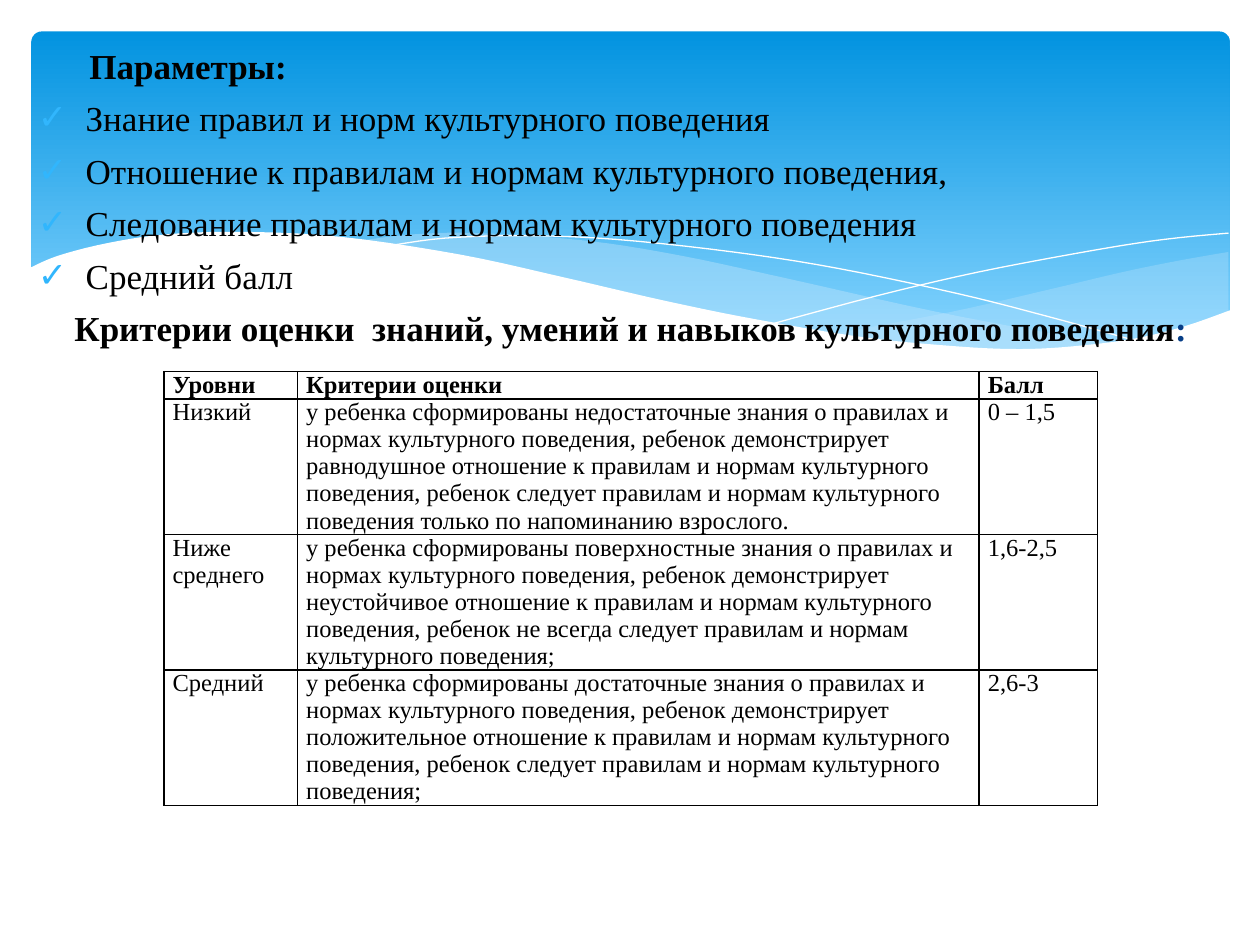
from dataclasses import dataclass

from pptx import Presentation
from pptx.dml.color import RGBColor as RGB
from pptx.enum.shapes import MSO_SHAPE as Shape
from pptx.enum.text import MSO_ANCHOR as Anchor, MSO_AUTO_SIZE as Fit, PP_ALIGN as Align
from pptx.oxml.ns import qn
from pptx.util import Inches, Pt
from lxml.etree import SubElement as Sub


@dataclass(frozen=True)
class Theme:
    """Colours and type sizes."""
    font: str = "Times New Roman"
    ink: str = "000000"
    navy: str = "073E87"
    tick: str = "31B6FD"
    deep: str = "0293E0"
    light: str = "83D3FE"
    pale: str = "C6E7FC"
    white: str = "FFFFFF"
    list_size: int = 20
    cell_size: int = 14
    gap: int = 6


THEME = Theme()
POINTS = [
    "Знание правил и норм культурного поведения",
    "Отношение к правилам и нормам культурного поведения,",
    "Следование правилам и нормам культурного поведения",
    "Средний балл",
]
ROWS = [
    ("Уровни", "Критерии оценки", "Балл"),
    ("Низкий",
     "у ребенка сформированы недостаточные знания о правилах и нормах культурного "
     "поведения, ребенок демонстрирует равнодушное отношение к правилам и нормам "
     "культурного поведения, ребенок следует правилам и нормам культурного поведения "
     "только по напоминанию взрослого.",
     "0 – 1,5"),
    ("Ниже\nсреднего",
     "у ребенка сформированы поверхностные знания о правилах и нормах культурного "
     "поведения, ребенок демонстрирует неустойчивое отношение к правилам и нормам "
     "культурного поведения, ребенок не всегда следует правилам и нормам культурного "
     "поведения;",
     "1,6-2,5"),
    ("Средний",
     "у ребенка сформированы достаточные знания о правилах и нормах культурного "
     "поведения, ребенок демонстрирует положительное отношение к правилам и нормам "
     "культурного поведения, ребенок следует правилам и нормам культурного поведения;",
     "2,6-3"),
]
RIGHT_TOP = [(9.52, .16), (9.12, .23), (8.68, .32), (8.09, .46), (7.3, .64), (6.38, .81)]
RIGHT_LOW = [(6.38, .81), (6.96, .88), (7.46, .93), (7.91, .94), (8.4, .91),
             (8.82, .85), (9.19, .75), (9.52, .63)]
MID_TOP = [(2.63, .07), (3.05, .02), (3.57, .01), (4.42, .07), (5.18, .19),
           (6.06, .38), (7.18, .63), (8.14, .81), (8.7, .89)]
MID_LOW = [(8.7, .89), (8.05, .94), (7.38, .93), (6.57, .84), (5.43, .64),
           (4.26, .38), (3.39, .19), (2.63, .07)]
FALL = [(2.86, .11), (3.3, .05), (3.93, .03), (4.66, .06), (5.59, .16),
        (6.42, .29), (7.37, .49), (8.08, .67), (8.84, .88)]
RISE = [(5.9, .73), (6.72, .51), (7.53, .32), (8.43, .15), (9.01, .06), (9.52, .01)]
EDGE = [(0, .29), (.23, .19), (.62, .09), (1.09, .02), (1.7, 0), (2.48, .04),
        (3.42, .18), (4.24, .36), (5.06, .55), (5.8, .7), (6.65, .84), (7.38, .91),
        (7.86, .93), (8.27, .91), (8.76, .85), (9.17, .75), (9.54, .62)]


def smooth(knots, steps=5):
    """Return points of a smooth curve through the knots."""
    ends = [knots[0], *knots, knots[-1]]
    curve = []
    for a, b, c, d in zip(ends, ends[1:], ends[2:], ends[3:]):
        for t in (n / steps for n in range(steps)):
            curve.append(tuple(
                (2 * q + (r - p) * t + (2 * p - 5 * q + 4 * r - s) * t ** 2
                 + (3 * q - p - 3 * r + s) * t ** 3) / 2
                for p, q, r, s in zip(a, b, c, d)))
    return curve + [knots[-1]]


def add_wave(slide, box, dots, fill=None, alpha=None):
    """Draw a filled wave, or a white hairline when no fill is given."""
    left, top = box[:2]
    dots = [(Inches(left + x), Inches(top + y)) for x, y in dots]
    pen = slide.shapes.build_freeform(*dots[0])
    pen.add_line_segments(dots[1:], close=bool(fill))
    wave = pen.convert_to_shape()
    wave.shadow.inherit = False
    if not fill:
        wave.fill.background()
        wave.line.color.rgb = RGB.from_string(THEME.white)
        wave.line.width = Pt(0)
        return
    wave.fill.solid()
    wave.fill.fore_color.rgb = RGB.from_string(fill)
    wave.line.fill.background()
    if alpha:
        tone = wave.element.spPr.find(qn("a:solidFill"))[0]
        Sub(tone, qn("a:alpha"), val=str(alpha * 1000))


def add_banner(slide, box):
    """Draw the blue panel and the waves at its foot."""
    left, top, width, height = box
    panel = slide.shapes.add_shape(Shape.ROUNDED_RECTANGLE, *map(Inches, box))
    panel.adjustments[0] = 0.03
    panel.shadow.inherit = False
    panel.line.fill.background()
    panel.fill.gradient()
    panel.fill.gradient_angle = 270
    tones = ((0, THEME.deep), (0.9, THEME.light))
    for stop, (place, tone) in zip(panel.fill.gradient_stops, tones):
        stop.position = place
        stop.color.rgb = RGB.from_string(tone)
    foot = (left - 0.02, top + 1.59)
    add_wave(slide, foot, smooth(RIGHT_TOP) + smooth(RIGHT_LOW), THEME.pale, 29)
    add_wave(slide, foot, smooth(MID_TOP) + smooth(MID_LOW), THEME.pale, 40)
    add_wave(slide, foot, smooth(FALL))
    add_wave(slide, foot, smooth(RISE))
    add_wave(slide, foot, smooth(EDGE) + [(9.54, 1.45), (0, 1.45)], THEME.white)


def set_font(para, size, bold):
    """Set the font of a paragraph."""
    font = para.font
    font.name, font.size, font.bold = THEME.font, Pt(size), bold
    font.color.rgb = RGB.from_string(THEME.ink)


def set_mark(para, left=0, hang=0, mark=None):
    """Set the indent and the bullet of a paragraph."""
    props = para._p.get_or_add_pPr()
    props.set("marL", str(Inches(left)))
    props.set("indent", str(Inches(-hang)))
    if mark:
        Sub(Sub(props, qn("a:buClr")), qn("a:srgbClr"), val=THEME.tick)
        Sub(props, qn("a:buChar"), char=mark)
    else:
        Sub(props, qn("a:buNone"))


def add_list(slide, body, box):
    """Fill the body placeholder with the heads and the ticked list."""
    body.left, body.top, body.width, body.height = map(Inches, box)
    body.element.getparent().append(body.element)
    frame = body.text_frame
    frame.auto_size, frame.vertical_anchor = Fit.NONE, Anchor.TOP
    frame.margin_top = Inches(0.14)
    frame.text = "\n".join(
        ["Параметры:", *POINTS,
         "Критерии оценки  знаний, умений и навыков культурного поведения"])
    head, *items, close = frame.paragraphs
    close.add_run().text = ":"
    set_mark(head, 0.41)
    set_mark(close)
    for item in items:
        set_mark(item, 0.38, 0.38, "✓")
    for para in frame.paragraphs:
        para.space_before = Pt(0 if para._p is head._p else THEME.gap)
        set_font(para, THEME.list_size, para._p in (head._p, close._p))
    close.alignment = Align.CENTER
    close.runs[-1].font.color.rgb = RGB.from_string(THEME.navy)


def set_cell(cell, text, bold, align):
    """Fill and frame one table cell."""
    cell.text = text
    cell.margin_left = cell.margin_right = Inches(0.07)
    cell.margin_top = cell.margin_bottom = 0
    for para in cell.text_frame.paragraphs:
        para.alignment = align
        set_font(para, THEME.cell_size, bold)
    props = cell._tc.get_or_add_tcPr()
    for side in ("lnL", "lnR", "lnT", "lnB"):
        line = Sub(props, qn(f"a:{side}"), w=str(Pt(1)))
        Sub(Sub(line, qn("a:solidFill")), qn("a:srgbClr"), val=THEME.ink)
    cell.fill.background()


def add_grid(slide, box):
    """Add the table of levels, criteria and scores."""
    grid = slide.shapes.add_table(len(ROWS), 3, *map(Inches, box)).table
    grid.first_row = grid.horz_banding = False
    for col, width in zip(grid.columns, (1.06, 5.41, 0.94)):
        col.width = Inches(width)
    for r, row in enumerate(ROWS):
        grid.rows[r].height = Inches(1.07 if r else 0.21)
        for c, text in enumerate(row):
            align = Align.LEFT if r and c < 2 else Align.JUSTIFY
            set_cell(grid.cell(r, c), text, r == 0, align)


def main():
    """Build and save the slide."""
    deck = Presentation()
    deck.slide_width, deck.slide_height = Inches(10), Inches(7.5)
    slide = deck.slides.add_slide(deck.slide_layouts[1])
    title, body = slide.placeholders
    title.element.getparent().remove(title.element)
    add_banner(slide, (0.25, 0.25, 9.51, 2.7))
    add_list(slide, body, (0.2, 0.21, 9.61, 6.49))
    add_grid(slide, (1.3, 2.95, 7.41, 3.42))
    deck.save("out.pptx")


if __name__ == "__main__":
    main()
